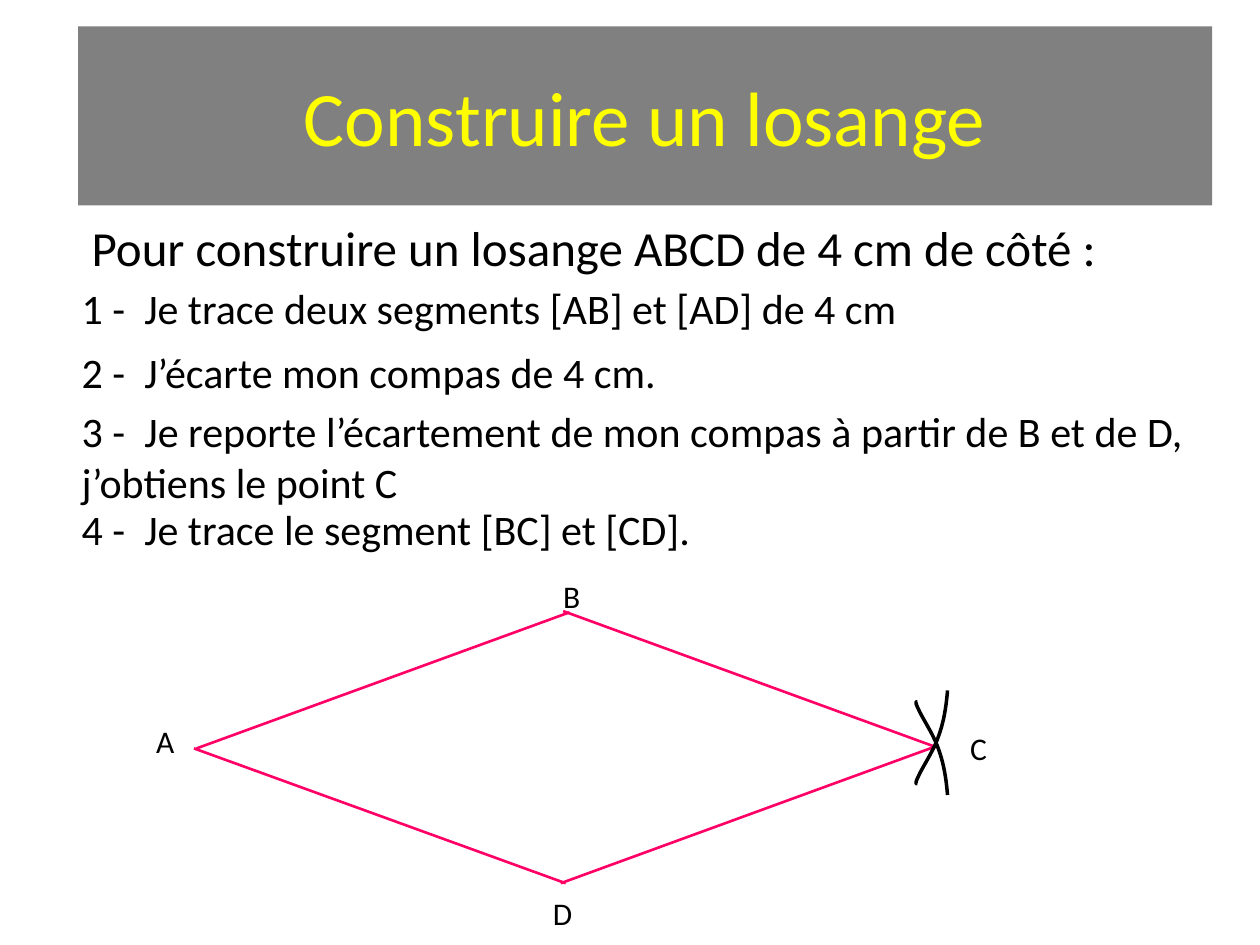
from lxml.etree import SubElement
from pptx import Presentation
from pptx.dml.color import RGBColor
from pptx.enum.shapes import MSO_CONNECTOR, MSO_SHAPE
from pptx.enum.text import MSO_ANCHOR, PP_ALIGN
from pptx.oxml.ns import qn
from pptx.util import Inches, Pt

# Grid of 100 columns by 75 rows
COLS, ROWS = 100, 75
CELL = Inches(0.1)
INK = {"band": "808080", "title": "FFFF00", "text": "000000", "side": "FF0066"}

STEPS = [
    (21.9, 5, "1 -  Je trace deux segments [AB] et [AD] de 4 cm"),
    (27, 5, "2 -  J’écarte mon compas de 4 cm."),
    (31.7, 9.1, "3 -  Je reporte l’écartement de mon compas à partir de B et de D, "
                "j’obtiens le point C"),
    (39.5, 5, "4 -  Je trace le segment [BC] et [CD]."),
]
LABELS = {"A": (11.4, 56.8), "B": (43.7, 45.3), "C": (76, 57.4), "D": (42.9, 70.5)}
SIDES = {
    "AD": (15.4, 59.4, 44.9, 70.1),
    "AB": (15.6, 59.4, 45.2, 48.6),
    "DC": (44.5, 70.1, 74.1, 59.3),
    "BC": (44.7, 48.5, 74.3, 59.3),
}
# Compass arc: start point, then cubic curves (two controls and an end)
START = (75.2, 54.8)
CURVES = [
    ((75.1, 56.1), (74.9, 57.3), (74.5, 58.4)),
    ((74.1, 59.6), (73.2, 60.9), (72.9, 61.6)),
    ((72.6, 62.2), (72.7, 62.2), (72.8, 62.2)),
]
AXIS = 58.95  # row about which the two arcs mirror each other


def cells(*nums):
    return [round(n * CELL) for n in nums]


def tint(name):
    return RGBColor.from_string(INK[name])


def write(frame, text, size=18, color="text", align=PP_ALIGN.LEFT,
          anchor=MSO_ANCHOR.TOP):
    frame.word_wrap = True
    frame.vertical_anchor = anchor
    para = frame.paragraphs[0]
    para.alignment = align
    run = para.add_run()
    run.text = text
    run.font.name = "Calibri"
    run.font.size = Pt(size)
    run.font.color.rgb = tint(color)


def label(slide, box, text, **style):
    write(slide.shapes.add_textbox(*cells(*box)).text_frame, text, **style)


def banner(slide, box, text):
    band = slide.shapes.add_shape(MSO_SHAPE.RECTANGLE, *cells(*box))
    band.shadow.inherit = False
    band.fill.solid()
    band.fill.fore_color.rgb = tint("band")
    band.line.fill.background()
    write(band.text_frame, text, size=44, color="title",
          align=PP_ALIGN.CENTER, anchor=MSO_ANCHOR.MIDDLE)


def side(slide, ends):
    line = slide.shapes.add_connector(MSO_CONNECTOR.STRAIGHT, *cells(*ends))
    line.line.color.rgb = tint("side")
    line.line.width = Pt(1.5)
    SubElement(line._element.spPr, qn("a:effectLst"))


def trace(start, curves, count=10):
    """Return points along a chain of cubic curves."""
    points = []
    for curve in curves:
        for i in range(1, count + 1):
            t = i / count
            weights = ((1 - t) ** 3, 3 * t * (1 - t) ** 2, 3 * t * t * (1 - t), t ** 3)
            knots = (start, *curve)
            points.append(tuple(sum(w * k[d] for w, k in zip(weights, knots))
                                for d in (0, 1)))
        start = curve[-1]
    return points


def arc(slide, points):
    first, *rest = [cells(*p) for p in points]
    pen = slide.shapes.build_freeform(*first)
    pen.add_line_segments(rest, close=False)
    shape = pen.convert_to_shape()
    shape.shadow.inherit = False
    shape.fill.background()
    shape.line.color.rgb = tint("text")
    shape.line.width = Pt(2)


def main():
    deck = Presentation()
    deck.slide_width, deck.slide_height = cells(COLS, ROWS)
    slide = deck.slides.add_slide(deck.slide_layouts[6])

    banner(slide, (6.2, 2.1, 90, 14.2), "Construire un losange")
    label(slide, (6.3, 16.8, 89.4, 5.3),
          "Pour construire un losange ABCD de 4 cm de côté :",
          size=28, align=PP_ALIGN.JUSTIFY)
    for top, high, text in STEPS:
        label(slide, (5.5, top, 89.4, high), text, size=24, align=PP_ALIGN.JUSTIFY)
    for name, spot in LABELS.items():
        label(slide, (*spot, 3.9, 4), name)
    for ends in SIDES.values():
        side(slide, ends)
    points = [START, *trace(START, CURVES)]
    arc(slide, points)
    arc(slide, [(x, 2 * AXIS - y) for x, y in points])

    deck.save("out.pptx")


if __name__ == "__main__":
    main()
